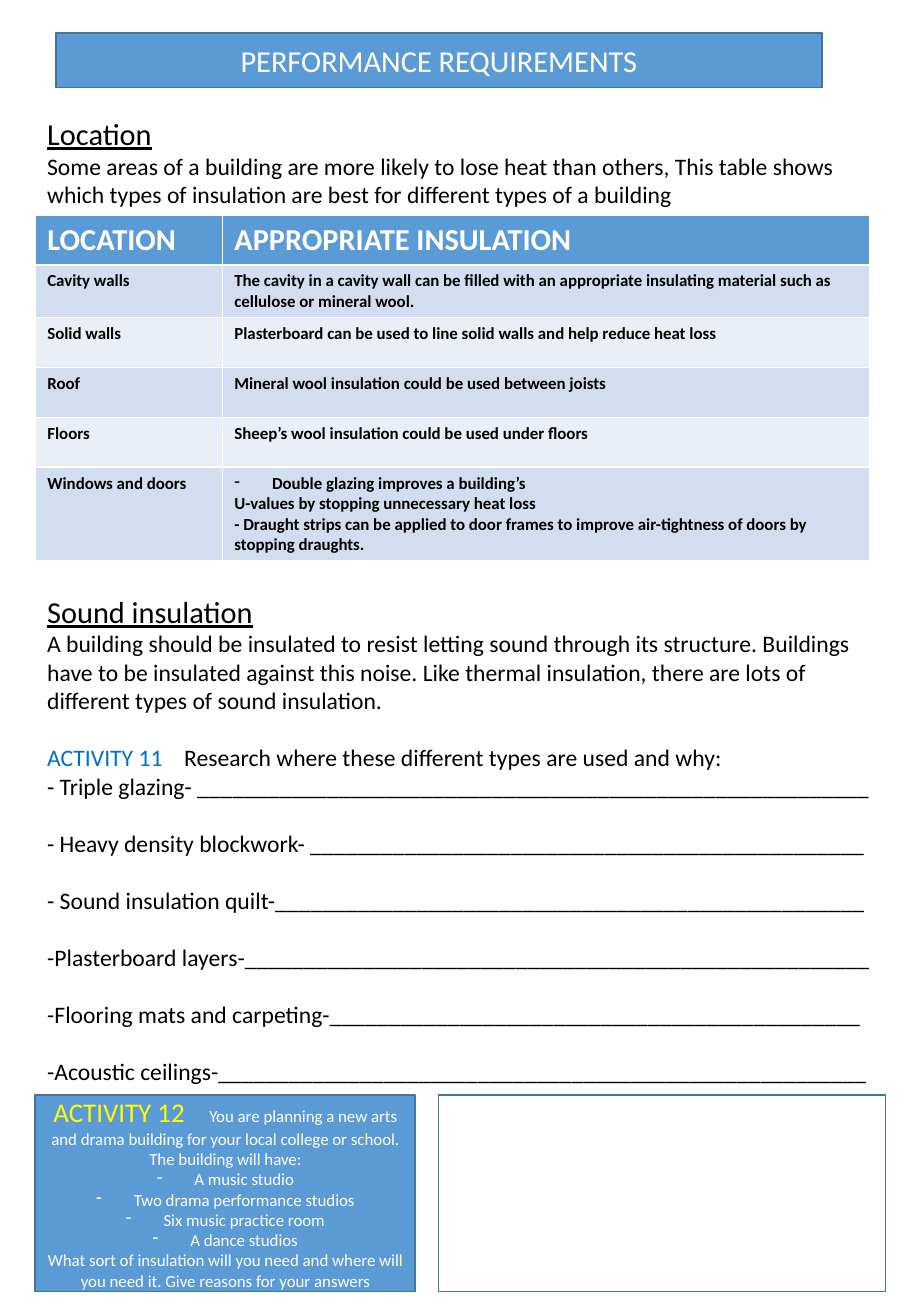
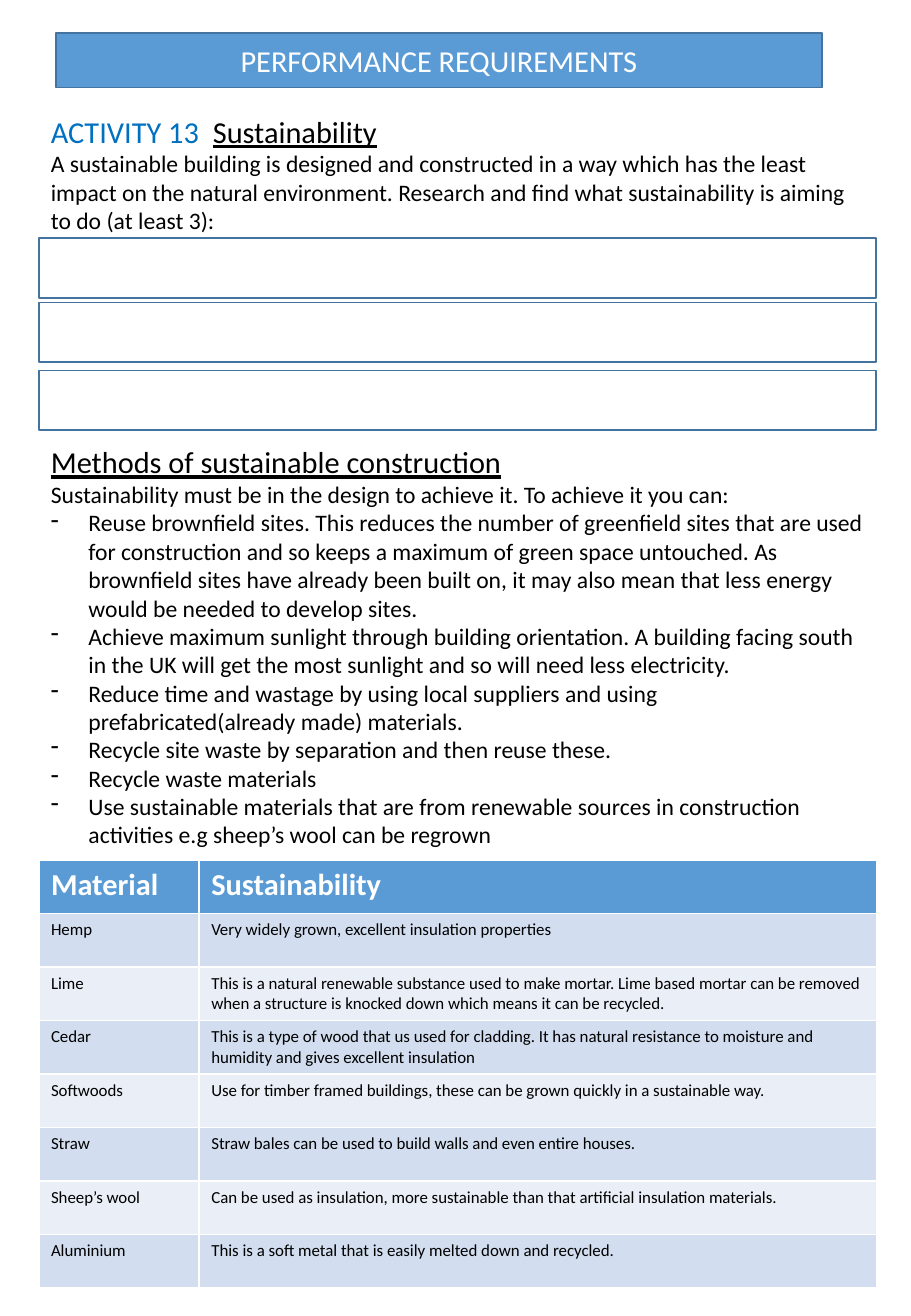
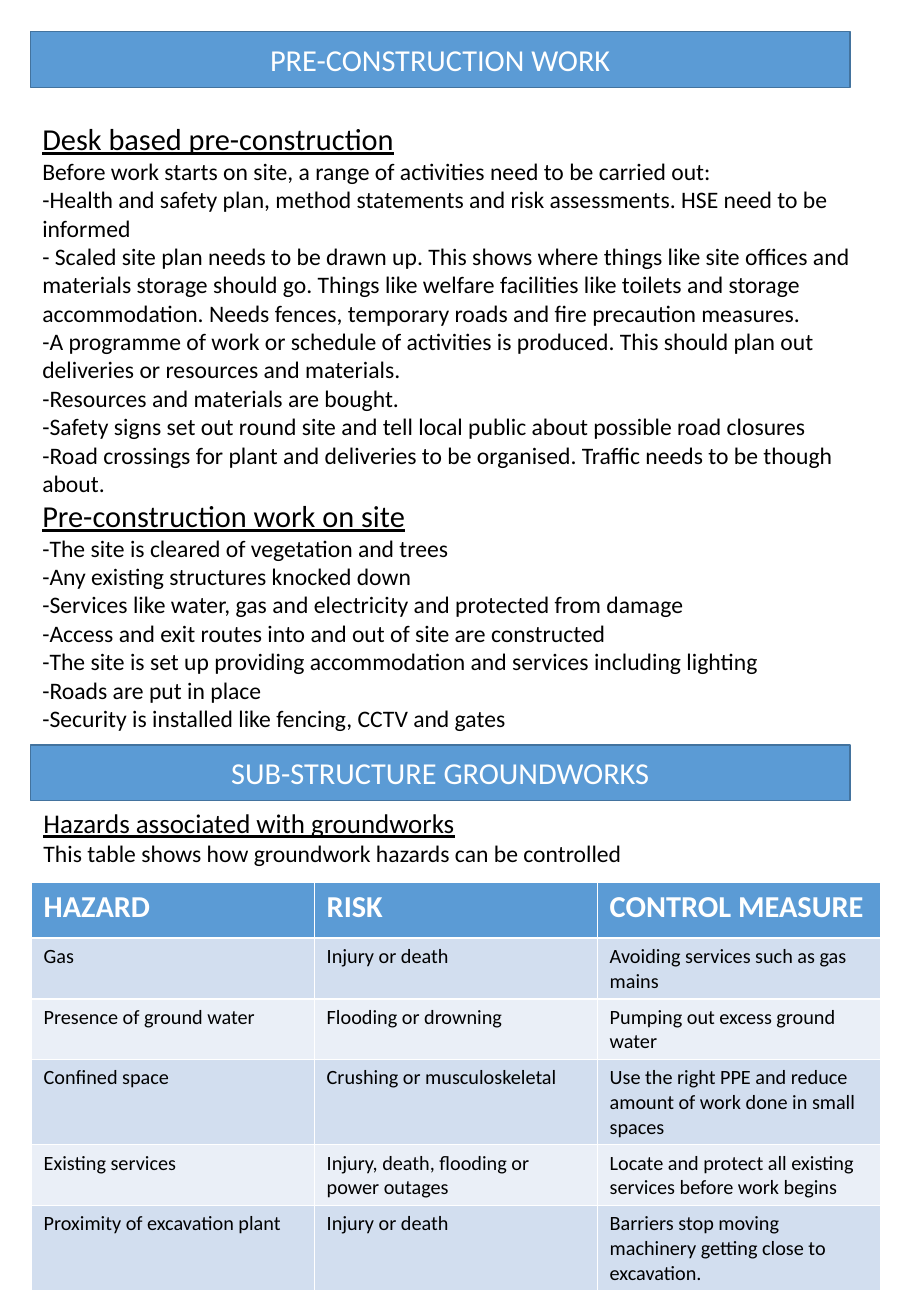
import dataclasses

import pptx
import pptx.dml.color
import pptx.enum.shapes
import pptx.enum.text
import pptx.oxml
import pptx.oxml.ns
import pptx.util

PX = 9144  # EMU: 100 px to the inch
FONT = "Calibri"
COLORS = {
    "band": "5B9BD5", "outline": "43739E", "odd": "D2DEEF", "even": "EAEFF7",
    "ink": "000000", "white": "FFFFFF", "activity": "0070C0", "highlight": "FFFF00",
}
# size, colour, bold, underline
STYLES = {
    "band": (18, "white", False, False),
    "heading": (18, "ink", False, True),
    "subheading": (16, "ink", False, True),
    "body": (14, "ink", False, False),
    "activity": (14, "activity", False, False),
    "activity heading": (18, "activity", False, False),
    "activity box": (16, "highlight", False, False),
    "box": (10, "white", False, False),
    "column head": (18, "white", True, False),
    "bold cell": (10, "ink", True, False),
    "small cell": (10, "ink", False, False),
    "cell": (12, "ink", False, False),
}
BLANK_LINE = 17  # points, one line of body text
SPACE_WIDTH = 0.226  # of the font size
BULLET_INDENT = 31


@dataclasses.dataclass
class Para:
    """Runs are (style, text) or (style, text, width of the closing gap in spaces)."""
    runs: list
    bullet: bool = False
    before: int = 0


def write(frame, paras, align=None):
    for number, para in enumerate(paras):
        line = frame.add_paragraph() if number else frame.paragraphs[0]
        line.alignment = align
        line.space_before = pptx.util.Pt(para.before)
        if para.bullet:
            props = line._p.get_or_add_pPr()
            props.set("marL", str(BULLET_INDENT * PX))
            props.set("indent", str(-BULLET_INDENT * PX))
            bullet = pptx.oxml.parse_xml(f'<a:buChar {pptx.oxml.ns.nsdecls("a")} char="-"/>')
            props.append(bullet)
        for style, text, *gap in para.runs:
            size, color, bold, underline = STYLES[style]
            for piece in [text, " "] if gap else [text]:
                run = line.add_run()
                run.text = piece
                run.font.name = FONT
                run.font.size = pptx.util.Pt(size)
                run.font.bold = bold
                run.font.underline = underline
                run.font.color.rgb = pptx.dml.color.RGBColor.from_string(COLORS[color])
            if gap:
                spacing = round((gap[0] - 1) * SPACE_WIDTH * size * 100)
                run._r.get_or_add_rPr().set("spc", str(spacing))


def draw_box(shape, paras):
    """Outline a box; one that holds text is also filled."""
    shape.shadow.inherit = False
    shape.line.color.rgb = pptx.dml.color.RGBColor.from_string(COLORS["outline"])
    shape.line.width = pptx.util.Pt(1)
    if not paras:
        shape.fill.background()
        return
    shape.fill.solid()
    shape.fill.fore_color.rgb = pptx.dml.color.RGBColor.from_string(COLORS["band"])
    shape.text_frame.word_wrap = True
    shape.text_frame.auto_size = pptx.enum.text.MSO_AUTO_SIZE.NONE
    shape.text_frame.vertical_anchor = pptx.enum.text.MSO_ANCHOR.MIDDLE
    write(shape.text_frame, paras, pptx.enum.text.PP_ALIGN.CENTER)


location = [
    Para([("heading", "Location")]),
    Para([("body", "Some areas of a building are more likely to lose heat than others, This table "
                   "shows which types of insulation are best for different types of a building")]),
]
window_advice = [
    Para([("bold cell", "Double glazing improves a building’s")], bullet=True),
    Para([("bold cell", "U-values by stopping unnecessary heat loss")]),
    Para([("bold cell", "- Draught strips can be applied to door frames to improve air-tightness of "
                        "doors by stopping draughts.")]),
]
insulation_rows = [
    ["LOCATION", "APPROPRIATE INSULATION"],
    ["Cavity walls", "The cavity in a cavity wall can be filled with an appropriate insulating "
                     "material such as cellulose or mineral wool."],
    ["Solid walls", "Plasterboard can be used to line solid walls and help reduce heat loss"],
    ["Roof", "Mineral wool insulation could be used between joists"],
    ["Floors", "Sheep’s wool insulation could be used under floors"],
    ["Windows and doors", window_advice],
]

# prompt and number of underscores to write on
research_prompts = [
    ("- Triple glazing- ", 57), ("- Heavy density blockwork- ", 47),
    ("- Sound insulation quilt-", 50), ("-Plasterboard layers-", 53),
    ("-Flooring mats and carpeting-", 45), ("-Acoustic ceilings-", 55),
]
sound_insulation = [
    Para([("heading", "Sound insulation")]),
    Para([("body", "A building should be insulated to resist letting sound through its structure. "
                   "Buildings have to be insulated against this noise. Like thermal insulation, "
                   "there are lots of different types of sound insulation.")]),
    Para([("activity", "ACTIVITY 11", 4),
          ("body", "Research where these different types are used and why:")], before=BLANK_LINE),
]
for number, (prompt, blanks) in enumerate(research_prompts):
    sound_insulation.append(Para([("body", prompt + "_" * blanks)],
                                 before=BLANK_LINE if number else 0))

arts_building = [
    Para([("activity box", "ACTIVITY 12", 4),
          ("box", "You are planning a new arts and drama building for your local college or "
                  "school. The building will have:")]),
    *[Para([("box", room)], bullet=True) for room in [
        "A music studio", "Two drama performance studios", "Six music practice room",
        "A dance studios"]],
    Para([("box", "What sort of insulation will you need and where will you need it. Give reasons "
                  "for your answers")]),
]

sustainability = [
    Para([("activity heading", "ACTIVITY 13", 2), ("heading", "Sustainability")]),
    Para([("body", "A sustainable building is designed and constructed in a way which has the least "
                   "impact on the natural environment. Research and find what sustainability is "
                   "aiming to do (at least 3):")]),
]
methods = [
    Para([("heading", "Methods of sustainable construction")]),
    Para([("body", "Sustainability must be in the design to achieve it. To achieve it you can:")]),
    *[Para([("body", method)], bullet=True) for method in [
        "Reuse brownfield sites. This reduces the number of greenfield sites that are used for "
        "construction and so keeps a maximum of green space untouched. As brownfield sites have "
        "already been built on, it may also mean that less energy would be needed to develop sites.",
        "Achieve maximum sunlight through building orientation. A building facing south in the UK "
        "will get the most sunlight and so will need less electricity.",
        "Reduce time and wastage by using local suppliers and using prefabricated(already made) "
        "materials.",
        "Recycle site waste by separation and then reuse these.",
        "Recycle waste materials",
        "Use sustainable materials that are from renewable sources in construction activities e.g "
        "sheep’s wool can be regrown"]],
]
material_rows = [
    ["Material", "Sustainability"],
    ["Hemp", "Very widely grown, excellent insulation properties"],
    ["Lime", "This is a natural renewable substance used to make mortar. Lime based mortar can be "
             "removed when a structure is knocked down which means it can be recycled."],
    ["Cedar", "This is a type of wood that us used for cladding. It has natural resistance to "
              "moisture and humidity and gives excellent insulation"],
    ["Softwoods", "Use for timber framed buildings, these can be grown quickly in a sustainable way."],
    ["Straw", "Straw bales can be used to build walls and even entire houses."],
    ["Sheep’s wool", "Can be used as insulation, more sustainable than that artificial insulation "
                     "materials."],
    ["Aluminium", "This is a soft metal that is easily melted down and recycled."],
]

pre_construction = [
    Para([("heading", "Desk based pre-construction")]),
    *[Para([("body", task)]) for task in [
        "Before work starts on site, a range of activities need to be carried out:",
        "-Health and safety plan, method statements and risk assessments. HSE need to be informed",
        "- Scaled site plan needs to be drawn up. This shows where things like site offices and "
        "materials storage should go. Things like welfare facilities like toilets and storage "
        "accommodation. Needs fences, temporary roads and fire precaution measures.",
        "-A programme of work or schedule of activities is produced. This should plan out "
        "deliveries or resources and materials.",
        "-Resources and materials are bought.",
        "-Safety signs set out round site and tell local public about possible road closures",
        "-Road crossings for plant and deliveries to be organised. Traffic needs to be though "
        "about."]],
    Para([("heading", "Pre-construction work on site")]),
    *[Para([("body", task)]) for task in [
        "-The site is cleared of vegetation and trees",
        "-Any existing structures knocked down",
        "-Services like water, gas and electricity and protected from damage",
        "-Access and exit routes into and out of site are constructed",
        "-The site is set up providing accommodation and services including lighting",
        "-Roads are put in place",
        "-Security is installed like fencing, CCTV and gates"]],
]
hazards = [
    Para([("subheading", "Hazards associated with groundworks")]),
    Para([("body", "This table shows how groundwork hazards can be controlled")]),
]
hazard_rows = [
    ["HAZARD", "RISK", "CONTROL MEASURE"],
    ["Gas", "Injury or death", "Avoiding services such as gas mains"],
    ["Presence of ground water", "Flooding or drowning", "Pumping out excess ground water"],
    ["Confined space", "Crushing or musculoskeletal",
     "Use the right PPE and reduce amount of work done in small spaces"],
    ["Existing services", "Injury, death, flooding or power outages",
     "Locate and protect all existing services before work begins"],
    ["Proximity of excavation plant", "Injury or death",
     "Barriers stop moving machinery getting close to excavation."],
]

# Every place is left, top, width, height in px.
pages = [
    {
        "title": ("PERFORMANCE REQUIREMENTS", (46, 27, 631, 45)),
        "texts": [((29, 90, 700, 88), location), ((29, 483, 700, 417), sound_insulation)],
        "table": ((29, 177), [154, 533], [41] * 5 + [77], "bold cell", insulation_rows),
        "boxes": [((29, 901, 313, 162), arts_building), ((361, 901, 368, 162), [])],
    },
    {
        "title": ("PERFORMANCE REQUIREMENTS", (46, 27, 631, 45)),
        "texts": [((32, 88, 689, 141), sustainability), ((32, 360, 689, 431), methods)],
        "table": ((32, 708), [132, 558], [44] * 8, "small cell", material_rows),
        "boxes": [((32, top, 689, 49), []) for top in (196, 249, 305)],
    },
    {
        "title": ("PRE-CONSTRUCTION WORK", (25, 26, 675, 46)),
        "texts": [((25, 94, 700, 542), pre_construction), ((26, 659, 674, 61), hazards)],
        "table": ((26, 726), [233] * 3, [46, 50, 50, 70, 50, 70], "cell", hazard_rows),
        "boxes": [((25, 613, 675, 46), [Para([("band", "SUB-STRUCTURE GROUNDWORKS")])])],
    },
]

deck = pptx.Presentation()
deck.slide_width = 750 * PX
deck.slide_height = 1083 * PX
title_only = deck.slide_layouts[5]

for page in pages:
    slide = deck.slides.add_slide(title_only)

    heading, place = page["title"]
    title = slide.shapes.title
    title.left, title.top, title.width, title.height = [length * PX for length in place]
    draw_box(title, [Para([("band", heading)])])

    for place, paras in page["texts"]:
        passage = slide.shapes.add_textbox(*[length * PX for length in place])
        passage.text_frame.word_wrap = True
        write(passage.text_frame, paras)

    (left, top), widths, heights, body_style, rows = page["table"]
    table = slide.shapes.add_table(len(rows), len(widths), left * PX, top * PX,
                                   sum(widths) * PX, sum(heights) * PX).table
    for column, width in zip(table.columns, widths):
        column.width = width * PX
    for r, (row, height) in enumerate(zip(rows, heights)):
        table.rows[r].height = height * PX
        fill = "band" if r == 0 else "odd" if r % 2 else "even"
        style = body_style if r else "column head"
        for c, content in enumerate(row):
            cell = table.cell(r, c)
            cell.fill.solid()
            cell.fill.fore_color.rgb = pptx.dml.color.RGBColor.from_string(COLORS[fill])
            paras = [Para([(style, content)])] if isinstance(content, str) else content
            write(cell.text_frame, paras)

    for place, paras in page["boxes"]:
        box = slide.shapes.add_shape(pptx.enum.shapes.MSO_SHAPE.RECTANGLE,
                                     *[length * PX for length in place])
        draw_box(box, paras)

deck.save("out.pptx")
